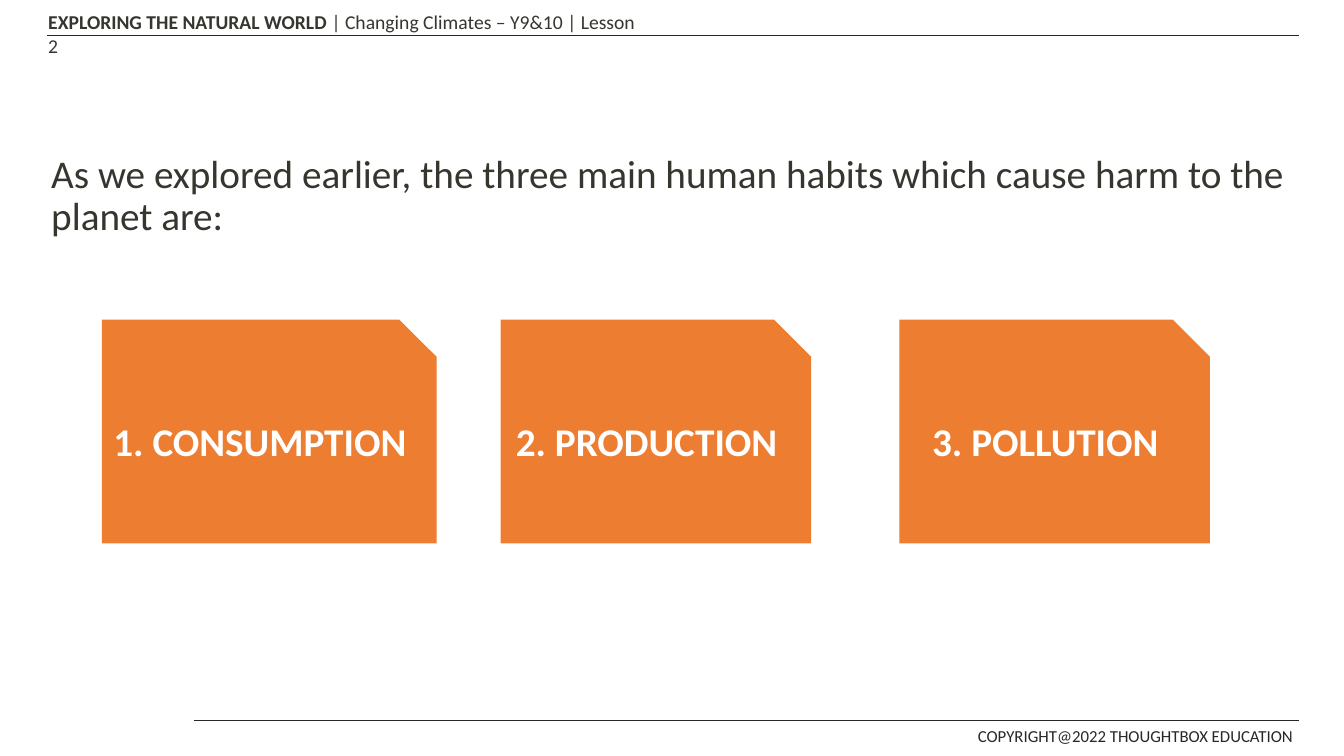
"""Build a slide naming the three human habits that harm the planet."""
from lxml import etree
from pptx import Presentation
from pptx.dml.color import RGBColor
from pptx.enum.shapes import MSO_CONNECTOR, MSO_SHAPE
from pptx.enum.text import MSO_ANCHOR, PP_ALIGN
from pptx.oxml.ns import qn
from pptx.util import Inches, Pt

STRAIGHT = MSO_CONNECTOR.STRAIGHT
SNIPPED_CARD = MSO_SHAPE.SNIP_1_RECTANGLE
MIDDLE = MSO_ANCHOR.MIDDLE
CENTER = PP_ALIGN.CENTER
FONT = "Calibri"
RULE_COLOR = RGBColor(0x25, 0x28, 0x23)
TEXT_COLOR = RGBColor(0x35, 0x37, 0x2F)
ORANGE = RGBColor(0xED, 0x7D, 0x31)
WHITE = RGBColor(0xFF, 0xFF, 0xFF)


def set_font(paragraph, size, color):
    paragraph.font.name = FONT
    paragraph.font.size = Pt(size)
    paragraph.font.color.rgb = color


def add_text(slide, left, top, width, height, text, size, color):
    box = slide.shapes.add_textbox(Inches(left), Inches(top), Inches(width), Inches(height))
    box.text_frame.word_wrap = True
    paragraph = box.text_frame.paragraphs[0]
    paragraph.text = text
    set_font(paragraph, size, color)
    return box


presentation = Presentation()
presentation.slide_width = Inches(13.33)
presentation.slide_height = Inches(7.5)
slide = presentation.slides.add_slide(presentation.slide_layouts[6])

for left, top in [(0.47, 0.35), (1.92, 7.15)]:
    rule = slide.shapes.add_connector(
        STRAIGHT, Inches(left), Inches(top), Inches(12.88), Inches(top))
    rule.line.color.rgb = RULE_COLOR
    rule.line.width = Pt(1)
    etree.SubElement(rule.line._get_or_add_ln().getparent(), qn("a:effectLst"))

add_text(slide, 9.6, 7.15, 3.4, 0.31, "COPYRIGHT@2022 THOUGHTBOX EDUCATION", 12, RULE_COLOR)

header = add_text(slide, 0.38, 0.05, 6.08, 0.34, "EXPLORING THE NATURAL WORLD ", 14, TEXT_COLOR)
header_paragraph = header.text_frame.paragraphs[0]
header_paragraph.runs[0].font.bold = True
lesson_run = header_paragraph.add_run()
lesson_run.text = "| Changing Climates – Y9&10 | Lesson 2"

title = add_text(
    slide, 0.41, 1.33, 12.55, 1.25,
    "As we explored earlier, the three main human habits which cause harm to the planet are:",
    28, TEXT_COLOR)
title.text_frame.vertical_anchor = MIDDLE
title.text_frame.paragraphs[0].line_spacing = 0.9

habits = [("CONSUMPTION", 3.32), ("PRODUCTION", 3.08), ("POLLUTION", 3.08)]
for index, (habit, width) in enumerate(habits):
    card = slide.shapes.add_shape(
        SNIPPED_CARD, Inches(1.01 + 3.955 * index), Inches(3.17), Inches(width), Inches(2.22))
    card.shadow.inherit = False
    card.fill.solid()
    card.fill.fore_color.rgb = ORANGE
    card.line.fill.background()
    card.text_frame.vertical_anchor = MIDDLE
    paragraph = card.text_frame.paragraphs[0]
    paragraph.text = f"{index + 1}. {habit}"
    paragraph.alignment = CENTER
    set_font(paragraph, 28, WHITE)
    paragraph.font.bold = True

presentation.save("out.pptx")
